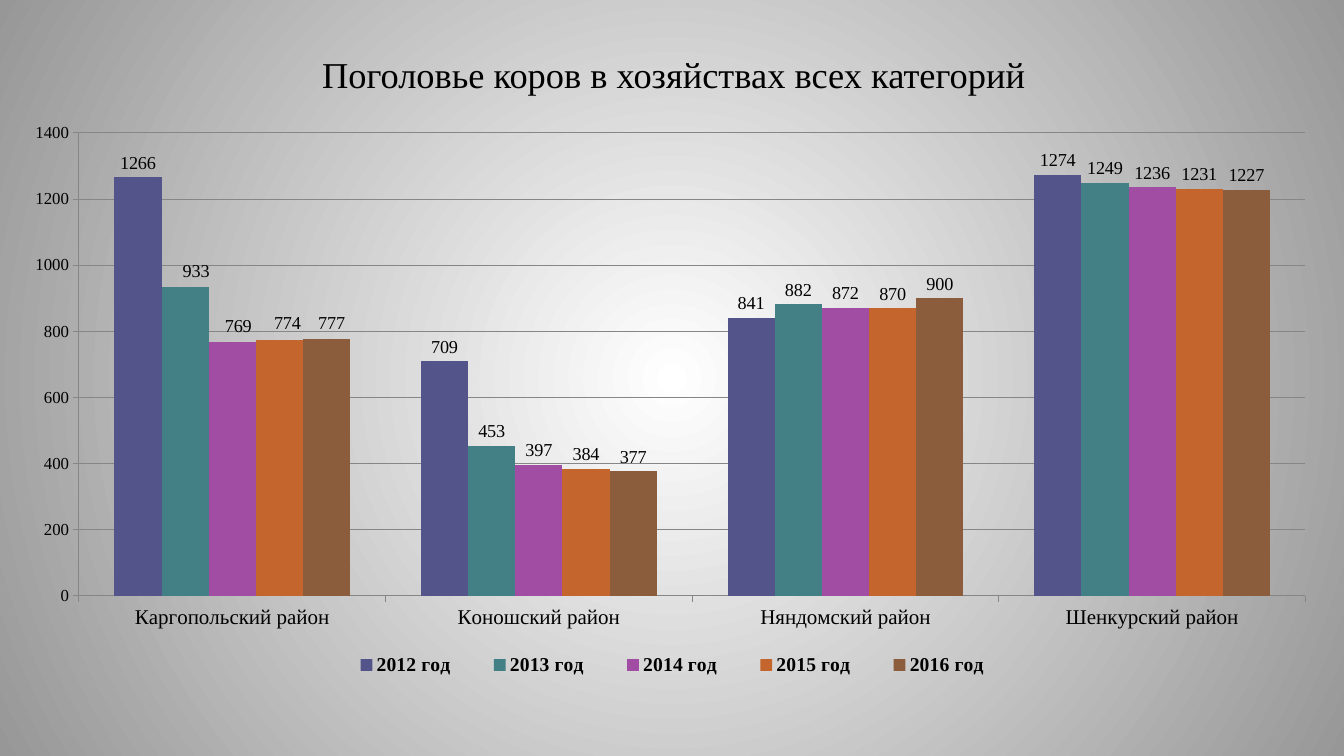
from dataclasses import dataclass

from lxml.etree import SubElement
from pptx import Presentation
from pptx.chart.chart import Chart
from pptx.chart.data import CategoryChartData
from pptx.dml.color import RGBColor
from pptx.enum.chart import XL_CHART_TYPE, XL_LABEL_POSITION, XL_LEGEND_POSITION, XL_TICK_MARK
from pptx.enum.text import MSO_ANCHOR, PP_ALIGN
from pptx.oxml import parse_xml
from pptx.oxml.ns import nsdecls, qn
from pptx.slide import Slide
from pptx.text.text import Font
from pptx.util import Emu, Pt

EMU_PER_PX = 914400 / 100.8
FACE = "Times New Roman"
BLACK, GREY = "000000", "868686"


@dataclass(frozen=True)
class Box:
    left: int
    top: int
    width: int
    height: int

    def emu(self) -> list[Emu]:
        return [px(side) for side in (self.left, self.top, self.width, self.height)]


@dataclass(frozen=True)
class Year:
    name: str
    cows: tuple[int, ...]
    color: str
    first_label_shift: tuple[int, int] = (0, 0)


DISTRICTS = ("Каргопольский район", "Коношский район", "Няндомский район", "Шенкурский район")
YEARS = (
    Year("2012 год", (1266, 709, 841, 1274), "53548A"),
    Year("2013 год", (933, 453, 882, 1249), "438086", (11, -2)),
    Year("2014 год", (769, 397, 872, 1236), "A04DA3", (6, -1)),
    Year("2015 год", (774, 384, 870, 1231), "C4652D", (8, -2)),
    Year("2016 год", (777, 377, 900, 1227), "8B5D3D", (5, -1)),
)
TITLE_BOX = Box(69, 31, 1210, 86)
CHART_BOX = Box(29, 108, 1277, 612)
PLOT_BOX = Box(50, 25, 1227, 463)
LEGEND_BOX = Box(295, 541, 697, 32)


def px(length: int) -> Emu:
    return Emu(round(length * EMU_PER_PX))


def rgb(color: str) -> RGBColor:
    return RGBColor.from_string(color)


def style_font(font: Font, size: int, bold: bool = False) -> None:
    font.name, font.size, font.bold = FACE, Pt(size), bold
    font.color.rgb = rgb(BLACK)


def manual_layout(settings: dict[str, str | float]):
    layout = parse_xml(f"<c:layout {nsdecls('c')}><c:manualLayout/></c:layout>")
    for tag, value in settings.items():
        SubElement(layout[0], qn(f"c:{tag}")).set("val", str(value))
    return layout


def box_layout(box: Box, target: dict[str, str]):
    """Place a chart part, measured from the chart's top left corner."""
    return manual_layout(target | {
        "xMode": "edge", "yMode": "edge",
        "x": box.left / CHART_BOX.width, "y": box.top / CHART_BOX.height,
        "w": box.width / CHART_BOX.width, "h": box.height / CHART_BOX.height,
    })


def replace_layout(parent, layout, index: int) -> None:
    for old in parent.findall(qn("c:layout")):
        parent.remove(old)
    parent.insert(index, layout)


def paint_background(slide: Slide) -> None:
    fill = slide.background.fill
    fill.gradient()
    for stop, position, color in zip(fill.gradient_stops, (0, 1), ("FFFFFF", "979797")):
        stop.position = position
        stop.color.rgb = rgb(color)
    linear = slide.element.find(f".//{qn('a:lin')}")
    linear.getparent().replace(linear, parse_xml(
        f'<a:path {nsdecls("a")} path="circle">'
        '<a:fillToRect l="50000" t="50000" r="50000" b="50000"/></a:path>'))


def write_title(slide: Slide) -> None:
    title = slide.shapes.title
    title.left, title.top, title.width, title.height = TITLE_BOX.emu()
    title.text_frame.vertical_anchor = MSO_ANCHOR.MIDDLE
    paragraph = title.text_frame.paragraphs[0]
    paragraph.alignment = PP_ALIGN.CENTER
    run = paragraph.add_run()
    run.text = "Поголовье коров в хозяйствах всех категорий"
    style_font(run.font, 26)


def style_axes(chart: Chart) -> None:
    for axis, size in ((chart.category_axis, 15), (chart.value_axis, 12)):
        style_font(axis.tick_labels.font, size)
        axis.major_tick_mark = XL_TICK_MARK.OUTSIDE
        axis.minor_tick_mark = XL_TICK_MARK.NONE
        axis.format.line.color.rgb = rgb(GREY)
        axis.format.line.width = Pt(0.75)
    cows = chart.value_axis
    cows.minimum_scale, cows.maximum_scale, cows.major_unit = 0, 1400, 200
    cows.major_gridlines.format.line.color.rgb = rgb(GREY)
    cows.major_gridlines.format.line.width = Pt(0.75)


def style_years(chart: Chart) -> None:
    shifts = []
    for series, year in zip(chart.plots[0].series, YEARS):
        series.format.fill.solid()
        series.format.fill.fore_color.rgb = rgb(year.color)
        series.invert_if_negative = False
        labels = series.data_labels
        labels.show_value = True
        labels.position = XL_LABEL_POSITION.OUTSIDE_END
        style_font(labels.font, 13)
        if any(year.first_label_shift):
            first_label = series.points[0].data_label
            first_label.position = XL_LABEL_POSITION.OUTSIDE_END
            style_font(first_label.font, 13)
            shifts.append(year.first_label_shift)
    for label, (right, down) in zip(chart.element.iter(qn("c:dLbl")), shifts):
        shift = {"x": right / CHART_BOX.width, "y": down / CHART_BOX.height}
        replace_layout(label, manual_layout(shift), 1)


def add_herd_chart(slide: Slide) -> None:
    data = CategoryChartData()
    data.categories = DISTRICTS
    for year in YEARS:
        data.add_series(year.name, year.cows)
    chart = slide.shapes.add_chart(XL_CHART_TYPE.COLUMN_CLUSTERED, *CHART_BOX.emu(), data).chart
    chart.has_title = False
    chart.font.name, chart.font.size = "Calibri", Pt(10)
    chart.font.color.rgb = rgb(BLACK)
    columns = chart.plots[0]
    columns.vary_by_categories = False
    columns.gap_width, columns.overlap = 150, 0
    style_axes(chart)
    style_years(chart)
    chart.has_legend = True
    chart.legend.position = XL_LEGEND_POSITION.RIGHT
    chart.legend.include_in_layout = False
    style_font(chart.legend.font, 14, bold=True)
    plot_area = chart.element.find(f".//{qn('c:plotArea')}")
    replace_layout(plot_area, box_layout(PLOT_BOX, {"layoutTarget": "inner"}), 0)
    legend = chart.element.find(f".//{qn('c:legend')}")
    replace_layout(legend, box_layout(LEGEND_BOX, {}), 1)


def main() -> None:
    deck = Presentation()
    deck.slide_width, deck.slide_height = px(1344), px(756)
    slide = deck.slides.add_slide(deck.slide_layouts[5])
    paint_background(slide)
    add_herd_chart(slide)
    write_title(slide)
    deck.save("out.pptx")


if __name__ == "__main__":
    main()
